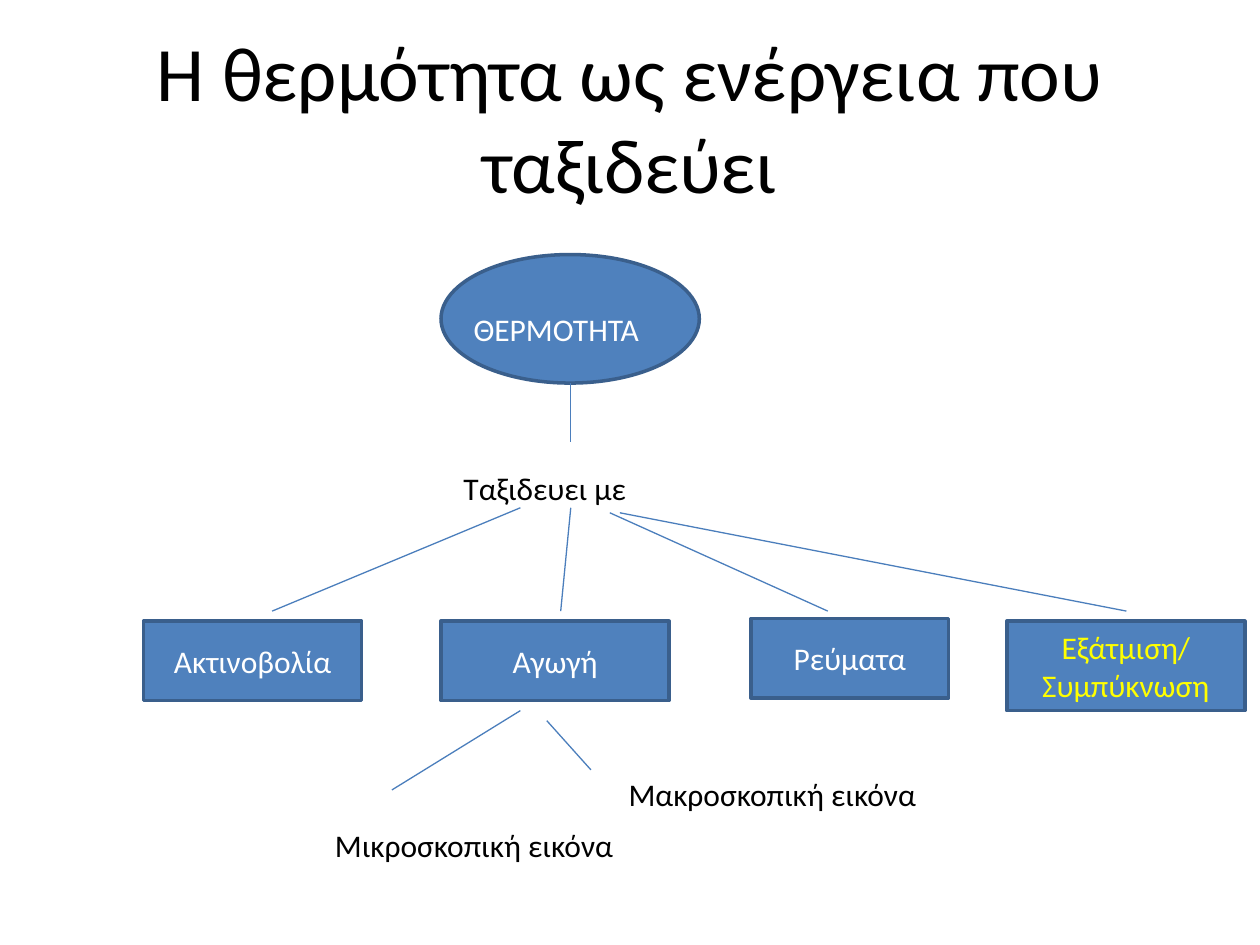
"""Build the concept map of heat as travelling energy."""
from dataclasses import dataclass

from lxml import etree
from pptx import Presentation
from pptx import util as u
from pptx.dml.color import RGBColor
from pptx.enum import shapes, text
from pptx.oxml.ns import qn

TITLE = ("Η θερμότητα ως ενέργεια που ταξιδεύει", (0.5, 0.3, 9, 1.25))
HEAT = (3.5, 2.02, 2.05, 1.02)
LABELS = [
    ("ΘΕΡΜΟΤΗΤΑ", (3.66, 2.41, 1.81, 0.4), "light", True),
    ("Ταξιδευει με", (3.58, 3.67, 1.51, 0.4), "dark", False),
    ("Μικροσκοπική εικόνα", (2.56, 6.51, 2.43, 0.4), "dark", False),
    ("Μακροσκοπική εικόνα", (4.89, 6.1, 2.51, 0.4), "dark", False),
]
WAYS = [
    ("Ακτινοβολία", (1.14, 4.93, 1.73, 0.63), "light"),
    ("Αγωγή", (3.5, 4.93, 1.81, 0.63), "light"),
    ("Ρεύματα", (5.96, 4.91, 1.57, 0.63), "light"),
    ("Εξάτμιση/ Συμπύκνωση", (7.99, 4.93, 1.89, 0.71), "accent"),
]
BRANCHES = [
    ((4.53, 3.04), (4.53, 3.51)),
    ((4.13, 4.03), (2.16, 4.85)),
    ((4.53, 4.03), (4.45, 4.85)),
    ((4.84, 4.07), (6.57, 4.85)),
    ((8.94, 4.85), (4.92, 4.07)),
    ((4.13, 5.64), (3.11, 6.27)),
    ((4.34, 5.72), (4.69, 6.11)),
]


@dataclass(frozen=True)
class Theme:
    font: str = "Calibri"
    title_size: int = 44
    body_size: int = 18
    dark: str = "000000"
    light: str = "FFFFFF"
    accent: str = "FFFF00"
    fill: str = "4F81BD"
    outline: str = "3A5F8C"
    branch: str = "4B7EBC"
    outline_width: float = 2
    branch_width: float = 0.75


THEME = Theme()


def inches(values):
    return [u.Inches(value) for value in values]


def write(frame, words, size, color, centred=False):
    paragraph = frame.paragraphs[0]
    paragraph.alignment = text.PP_ALIGN.CENTER if centred else text.PP_ALIGN.LEFT
    run = paragraph.add_run()
    run.text = words
    run.font.name = THEME.font
    run.font.size = u.Pt(size)
    run.font.color.rgb = RGBColor.from_string(color)
    if centred:
        frame.vertical_anchor = text.MSO_ANCHOR.MIDDLE


def add_label(slide, words, place, size, color, wrap, centred=False):
    frame = slide.shapes.add_textbox(*inches(place)).text_frame
    frame.word_wrap = wrap
    write(frame, words, size, color, centred)


def add_node(slide, kind, place):
    node = slide.shapes.add_shape(kind, *inches(place))
    node.shadow.inherit = False
    node.fill.solid()
    node.fill.fore_color.rgb = RGBColor.from_string(THEME.fill)
    node.line.color.rgb = RGBColor.from_string(THEME.outline)
    node.line.width = u.Pt(THEME.outline_width)
    return node


def add_branch(slide, start, end):
    branch = slide.shapes.add_connector(
        shapes.MSO_CONNECTOR.STRAIGHT, *inches(start + end))
    branch.line.color.rgb = RGBColor.from_string(THEME.branch)
    branch.line.width = u.Pt(THEME.branch_width)
    etree.SubElement(branch.element.spPr, qn("a:effectLst"))


def main():
    deck = Presentation()
    deck.slide_width, deck.slide_height = inches((10, 7.5))
    slide = deck.slides.add_slide(deck.slide_layouts[6])

    words, place = TITLE
    add_label(slide, words, place, THEME.title_size, THEME.dark, True, centred=True)
    add_node(slide, shapes.MSO_SHAPE.OVAL, HEAT)
    for words, place, tone, wrap in LABELS:
        add_label(slide, words, place, THEME.body_size, getattr(THEME, tone), wrap)
    for words, place, tone in WAYS:
        way = add_node(slide, shapes.MSO_SHAPE.RECTANGLE, place)
        way.text_frame.word_wrap = True
        write(way.text_frame, words, THEME.body_size, getattr(THEME, tone), centred=True)
    for start, end in BRANCHES:
        add_branch(slide, start, end)

    deck.save("out.pptx")


if __name__ == "__main__":
    main()
